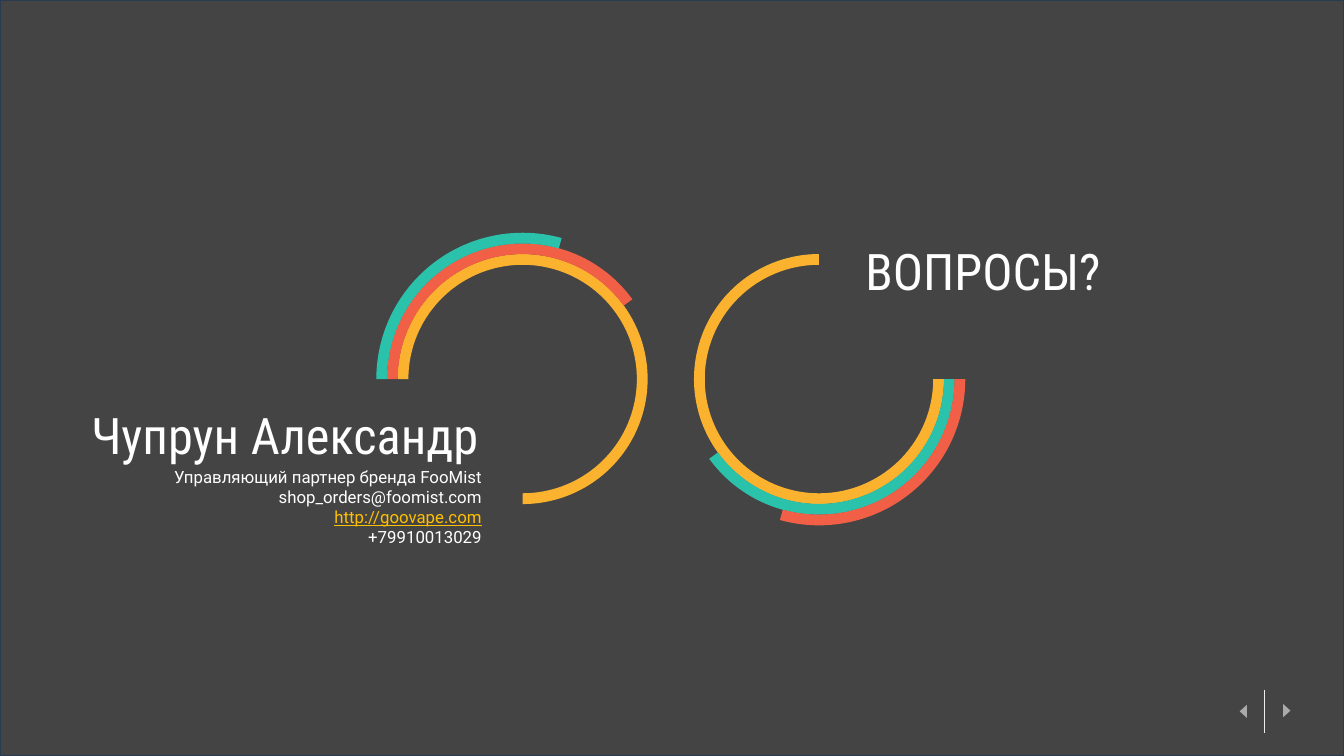
from lxml import etree
from pptx import Presentation
from pptx.dml.color import RGBColor
from pptx.enum.shapes import MSO_CONNECTOR, MSO_SHAPE
from pptx.enum.text import MSO_ANCHOR, MSO_AUTO_SIZE, PP_ALIGN
from pptx.oxml.ns import qn
from pptx.util import Pt

ARC, RECT = MSO_SHAPE.BLOCK_ARC, MSO_SHAPE.RECTANGLE
LINE = MSO_CONNECTOR.STRAIGHT
LEFT, RIGHT = PP_ALIGN.LEFT, PP_ALIGN.RIGHT
TOP, MIDDLE = MSO_ANCHOR.TOP, MSO_ANCHOR.MIDDLE
WIDE, HIGH = 1920, 1080
HEAD, BODY = "Roboto Condensed", "Roboto"
COLORS = {
    "back": "444444", "frame": "283B4F", "rule": "EBEBEB", "arrow": "AAAAAA",
    "teal": "2BC2AC", "red": "F15F47", "gold": "FBB22F",
    "text": "FFFFFF", "link": "FFC000",
}


def color(name):
    return RGBColor.from_string(COLORS[name])


def paint(shape, name):
    shape.shadow.inherit = False
    shape.fill.solid()
    shape.fill.fore_color.rgb = color(name)
    shape.line.fill.background()


def write(shape, box, lines, font, size, align, anchor, inset):
    """Place a text shape in box and fill it with one paragraph per line."""
    shape.left, shape.top, shape.width, shape.height = map(Pt, box)
    frame = shape.text_frame
    frame.word_wrap = True
    frame.auto_size = MSO_AUTO_SIZE.NONE
    frame.vertical_anchor = anchor
    frame.margin_left = frame.margin_right = Pt(inset)
    frame.margin_top = frame.margin_bottom = Pt(inset)
    frame.text = "\n".join(lines)
    for para in frame.paragraphs:
        para.alignment = align
        para.font.name = font
        para.font.size = Pt(size)
        para.font.color.rgb = color("text")


def add_text(slide, box, *style):
    shape = slide.shapes.add_textbox(*map(Pt, box))
    write(shape, box, *style)
    return shape


def add_rings(slide, x, y, start, rings):
    """Draw nested arcs around (x, y), each sweeping clockwise from start."""
    thick, inner = 15.4, 178.6
    for i, (name, sweep) in enumerate(rings):
        r = inner + i * thick - 0.2 * i
        arc = slide.shapes.add_shape(ARC, Pt(x - r), Pt(y - r), Pt(2 * r), Pt(2 * r))
        # Angles are held in 60000ths of a degree, scaled by 100000
        arc.adjustments[0] = start * 0.6
        arc.adjustments[1] = (start + sweep) % 360 * 0.6
        arc.adjustments[2] = thick / (2 * r)
        paint(arc, name)


def add_frame(slide):
    frame = slide.shapes.add_shape(RECT, 0, 0, Pt(WIDE), Pt(HIGH))
    frame.shadow.inherit = False
    frame.fill.background()
    frame.line.color.rgb = color("frame")
    frame.line.width = Pt(2)


def add_arrow(slide, base, tip, y):
    half = 9.4
    build = slide.shapes.build_freeform(Pt(base), Pt(y - half))
    build.add_line_segments([(Pt(tip), Pt(y)), (Pt(base), Pt(y + half))])
    paint(build.convert_to_shape(), "arrow")


def add_pager(slide, x, y, high):
    """Draw the rule at x with an arrow on each side."""
    rule = slide.shapes.add_connector(LINE, Pt(x), Pt(y), Pt(x), Pt(y + high))
    rule.line.color.rgb = color("rule")
    rule.line.width = Pt(2)
    etree.SubElement(rule._element.spPr, qn("a:effectLst"))
    add_arrow(slide, x - 25.2, x - 35.5, y + 30.5)
    add_arrow(slide, x + 26.6, x + 37, y + 29.5)


def add_card(slide, x, y, wide):
    """Write the speaker's name and contacts, flush right."""
    add_text(slide, (x, y, wide, 95), ["Чупрун Александр"],
             HEAD, 72, RIGHT, MIDDLE, 4.3)
    lines = ["Управляющий партнер бренда FooMist", "shop_orders@foomist.com",
             "http://goovape.com", "+79910013029"]
    box = add_text(slide, (x + 88, y + 93, wide - 88, 70), lines,
                   BODY, 24, RIGHT, TOP, 0)
    link = box.text_frame.paragraphs[2].runs[0].font
    link.color.rgb = color("link")
    link.underline = True


def main():
    deck = Presentation()
    deck.slide_width, deck.slide_height = Pt(WIDE), Pt(HIGH)
    slide = deck.slides.add_slide(deck.slide_layouts[5])
    slide.background.fill.solid()
    slide.background.fill.fore_color.rgb = color("back")
    add_frame(slide)
    add_pager(slide, 1806.5, 985.7, 61)
    add_rings(slide, 746.6, 541.5, 180, [("gold", 270), ("red", 144), ("teal", 105.5)])
    add_card(slide, 33, 573, 655)
    add_rings(slide, 1170, 541.5, 0, [("gold", 270), ("teal", 144), ("red", 105.5)])
    write(slide.shapes.title, (1232, 339, 439, 95), ["ВОПРОСЫ?"],
          HEAD, 72, LEFT, MIDDLE, 4.3)
    deck.save("out.pptx")


if __name__ == "__main__":
    main()
